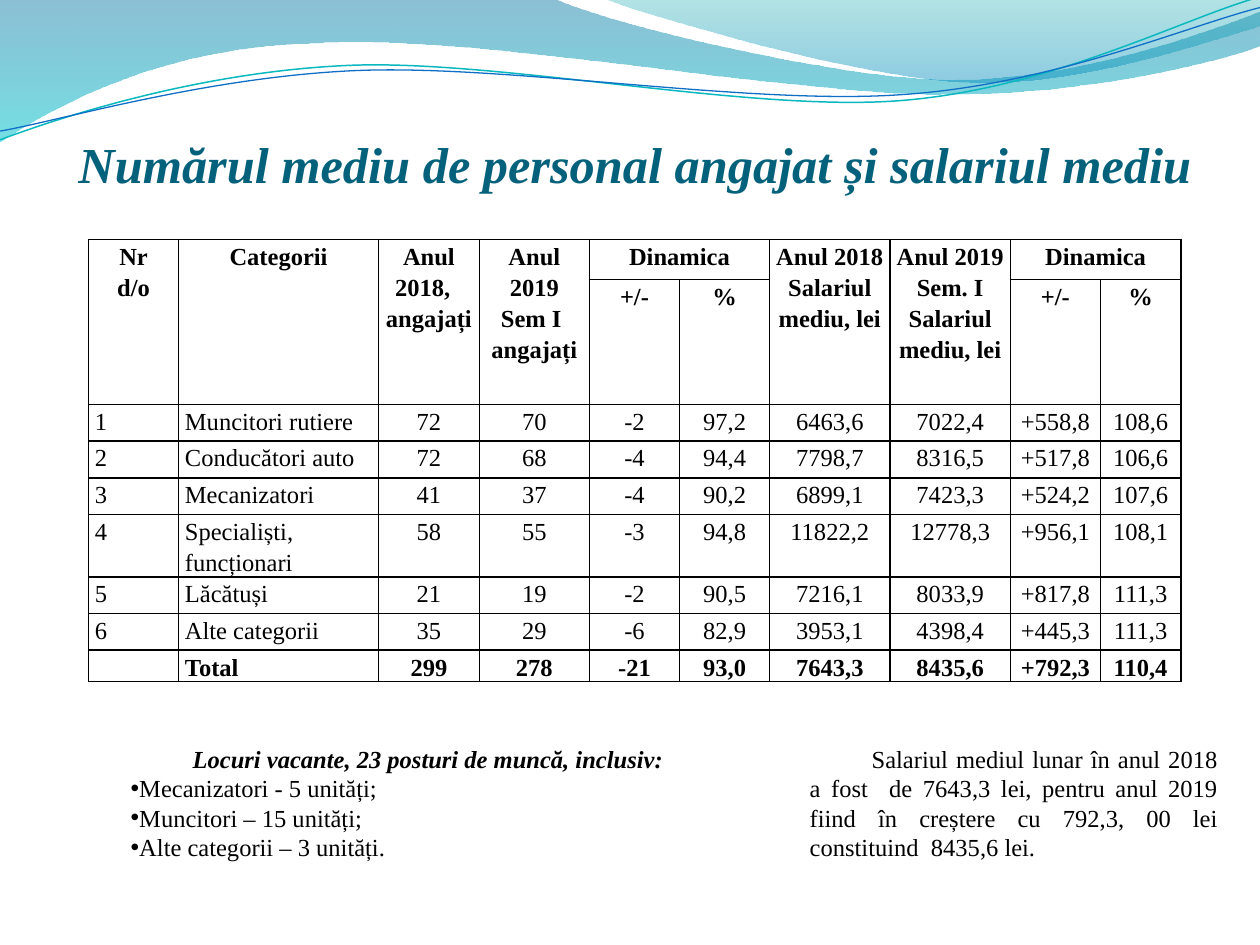
from lxml.etree import SubElement
from pptx import Presentation
from pptx.dml.color import RGBColor
from pptx.enum.shapes import MSO_SHAPE as Shape
from pptx.enum.text import MSO_ANCHOR as Anchor, MSO_AUTO_SIZE as AutoSize, PP_ALIGN as Align
from pptx.oxml.ns import qn
from pptx.util import Pt

TEXT = {"name": "Times New Roman", "size": Pt(14), "bold": False, "italic": False}
BOLD = {**TEXT, "bold": True}
BOLD_ITALIC = {**BOLD, "italic": True}
TITLE = {**BOLD_ITALIC, "size": Pt(28.8)}

# Outlines in points: a start, then lines (2 numbers) and Bézier curves (6 numbers).
LEFT_BAND = [(-0.7, -0.7), (316.8, -0.7), (342.7, 12.2, 478.1, 45.4, 545.8, 45.4),
             (614.2, 45.4, 689.8, 18.7, 720, 6.5), (720.7, 25.9),
             (707.8, 31.7, 626.4, 54.7, 537.1, 54), (447.8, 54, 275, 20.2, 185, 24.5),
             (92.9, 25.9, 33.1, 59.8, -0.7, 81.4)]
RIGHT_BAND = [(344.9, -0.7), (366.5, 7.9, 491, 44.6, 553.7, 46.8),
              (616.3, 49.7, 691.9, 23, 720, 15.1), (720, 0)]
TEAL_WAVE = [(0, 79.9), (34.6, 67, 113.8, 41, 199.4, 37.4),
             (284.4, 33.8, 427, 64.1, 513.4, 57.6), (599.8, 51.1, 675.4, 10.8, 718.6, -1.4)]
BLUE_WAVE = [(0, 74.9), (33.8, 69.1, 118.1, 43.9, 203.8, 40.3),
             (290.2, 36.7, 429.8, 60.5, 516.2, 54), (601.9, 48.2, 677.5, 15.1, 720, 4.3)]

COLUMNS = [51.5, 114.3, 57.5, 63, 51.5, 51.5, 68.8, 68.8, 51.5, 45.9]
ROWS = [23, 71.3, 21, 21, 21, 35.4, 21, 21, 17.7]
HEADERS = {  # (row, column): (text, rows spanned, columns spanned)
    (0, 0): ("Nr\nd/o", 2, 1),
    (0, 1): ("Categorii", 2, 1),
    (0, 2): ("Anul 2018,  \nangajați", 2, 1),
    (0, 3): ("Anul 2019\nSem I \nangajați", 2, 1),
    (0, 4): ("Dinamica", 1, 2),
    (0, 6): ("Anul 2018\nSalariul mediu, lei", 2, 1),
    (0, 7): ("Anul 2019 \nSem. I\nSalariul mediu, lei", 2, 1),
    (0, 8): ("Dinamica", 1, 2),
    (1, 4): ("+/-", 1, 1), (1, 5): ("%", 1, 1),
    (1, 8): ("+/-", 1, 1), (1, 9): ("%", 1, 1),
}
STAFF = [
    ["1", "Muncitori rutiere", "72", "70", "-2", "97,2", "6463,6", "7022,4", "+558,8", "108,6"],
    ["2", "Conducători auto", "72", "68", "-4", "94,4", "7798,7", "8316,5", "+517,8", "106,6"],
    ["3", "Mecanizatori", "41", "37", "-4", "90,2", "6899,1", "7423,3", "+524,2", "107,6"],
    ["4", "Specialiști, funcționari", "58", "55", "-3", "94,8", "11822,2", "12778,3", "+956,1", "108,1"],
    ["5", "Lăcătuși", "21", "19", "-2", "90,5", "7216,1", "8033,9", "+817,8", "111,3"],
    ["6", "Alte categorii", "35", "29", "-6", "82,9", "3953,1", "4398,4", "+445,3", "111,3"],
    ["", "Total", "299", "278", "-21", "93,0", "7643,3", "8435,6", "+792,3", "110,4"],
]
VACANCIES = ["Mecanizatori - 5 unități;", "Muncitori – 15 unități;", "Alte categorii – 3 unități."]
SALARY = ("Salariul mediul lunar în anul 2018 a fost  de 7643,3 lei, pentru anul 2019 "
          "fiind în creștere cu 792,3, 00 lei constituind  8435,6 lei.")


def rgb(hex_color):
    return RGBColor.from_string(hex_color)


def set_attrs(obj, values):
    for name, value in values.items():
        setattr(obj, name, value)


def place(sp, left, top, width, height):
    set_attrs(sp, {"left": Pt(left), "top": Pt(top), "width": Pt(width), "height": Pt(height)})


def add_text(p, text, font, align, spacing=1.0, color="000000"):
    set_attrs(p, {"alignment": align, "line_spacing": spacing, "space_before": Pt(0)})
    if not text:
        SubElement(p._p, qn("a:endParaRPr"), sz=str(int(font["size"].pt * 100)))
        return
    r = p.add_run()
    r.text = text
    set_attrs(r.font, font)
    r.font.color.rgb = rgb(color)


def set_indent(p, first_line=0, bullet=None):
    pPr = p._p.get_or_add_pPr()
    pPr.set("marL", "0")
    pPr.set("indent", str(Pt(first_line)))
    if bullet:
        SubElement(pPr, qn("a:buFont"), typeface="Arial")
        SubElement(pPr, qn("a:buChar"), char=bullet)
    else:
        SubElement(pPr, qn("a:buNone"))


def add_outline(slide, outline, close):
    """Draw straight segments through all points, then turn each curve's three into a Bézier."""
    (x, y), *segments = outline
    points = [(Pt(s[i]), Pt(s[i + 1])) for s in segments for i in range(0, len(s), 2)]
    builder = slide.shapes.build_freeform(Pt(x), Pt(y))
    builder.add_line_segments(points, close=close)
    sp = builder.convert_to_shape()
    sp.shadow.inherit = False
    lines = iter(list(sp._element.iter(qn("a:lnTo"))))
    for segment in segments:
        first = next(lines)
        if len(segment) == 6:
            first.tag = qn("a:cubicBezTo")
            for line in (next(lines), next(lines)):
                first.append(line[0])
                line.getparent().remove(line)
    return sp


def add_band(slide, outline, stops):
    """Add a closed shape with a downward gradient of (colour, opacity %) stops."""
    sp = add_outline(slide, outline, True)
    sp.line.fill.background()
    sp.fill.gradient()
    sp.fill.gradient_angle = 270
    for stop, position, (color, _) in zip(sp.fill.gradient_stops, (0, 1), stops):
        stop.position = position
        stop.color.rgb = rgb(color)
    for clr, (_, opacity) in zip(sp._element.spPr.iter(qn("a:srgbClr")), stops):
        SubElement(clr, qn("a:alpha"), val=str(opacity * 1000))


def add_wave(slide, outline, color, width):
    sp = add_outline(slide, outline, False)
    sp.fill.background()
    sp.line.color.rgb = rgb(color)
    sp.line.width = Pt(width)


def fill_title(sp, text):
    place(sp, 36, 55.4, 653.8, 90)
    tf = sp.text_frame
    set_attrs(tf, {"auto_size": AutoSize.NONE, "vertical_anchor": Anchor.BOTTOM, "word_wrap": True,
                   "margin_left": 0, "margin_right": 0, "margin_bottom": Pt(35)})
    add_text(tf.paragraphs[0], text, TITLE, Align.CENTER, color="04617B")


def format_cell(cell, text, font, align):
    set_attrs(cell, {"margin_left": Pt(3.6), "margin_right": Pt(3.6), "margin_top": 0,
                     "margin_bottom": 0, "vertical_anchor": Anchor.TOP})
    tcPr = cell._tc.get_or_add_tcPr()
    for side in ("lnL", "lnR", "lnT", "lnB"):
        ln = SubElement(tcPr, qn(f"a:{side}"), w=str(Pt(1)))
        SubElement(SubElement(ln, qn("a:solidFill")), qn("a:srgbClr"), val="000000")
    cell.fill.background()
    tf = cell.text_frame
    for i, line in enumerate(text.split("\n")):
        add_text(tf.add_paragraph() if i else tf.paragraphs[0], line, font, align, 1.15)


def add_staff_table(slide):
    table = slide.shapes.add_table(len(ROWS), len(COLUMNS), Pt(50.6), Pt(136.8),
                                   Pt(sum(COLUMNS)), Pt(sum(ROWS))).table
    set_attrs(table, {"first_row": False, "horz_banding": False})
    for column, width in zip(table.columns, COLUMNS):
        column.width = Pt(width)
    for row, height in zip(table.rows, ROWS):
        row.height = Pt(height)
    for i in range(2):
        for j in range(len(COLUMNS)):
            text, down, across = HEADERS.get((i, j), ("", 1, 1))
            format_cell(table.cell(i, j), text, BOLD, Align.CENTER)
            if down * across > 1:
                table.cell(i, j).merge(table.cell(i + down - 1, j + across - 1))
    for i, values in enumerate(STAFF, 2):
        font = BOLD if values is STAFF[-1] else TEXT
        for j, value in enumerate(values):
            format_cell(table.cell(i, j), value, font, Align.LEFT if j < 2 else Align.CENTER)


def format_note(sp):
    sp.fill.solid()
    sp.fill.fore_color.rgb = sp.line.color.rgb = rgb("FFFFFF")
    sp.line.width = Pt(2)
    tf = sp.text_frame
    set_attrs(tf, {"auto_size": AutoSize.NONE, "vertical_anchor": Anchor.MIDDLE, "word_wrap": True})
    return tf


def fill_vacancies(sp):
    place(sp, 67.5, 405.4, 337.5, 106.6)
    tf = format_note(sp)
    p = tf.paragraphs[0]
    add_text(p, "Locuri vacante, 23 posturi de muncă, inclusiv:", BOLD_ITALIC, Align.LEFT)
    set_indent(p, 35.4)
    for vacancy in VACANCIES:
        p = tf.add_paragraph()
        add_text(p, vacancy, TEXT, Align.JUSTIFY)
        set_indent(p, bullet="•")


def add_salary_note(slide):
    sp = slide.shapes.add_shape(Shape.RECTANGLE, Pt(455.6), Pt(405.4), Pt(247.5), Pt(106.6))
    sp.shadow.inherit = False
    p = format_note(sp).paragraphs[0]
    add_text(p, SALARY, TEXT, Align.JUSTIFY)
    set_indent(p, 35.4)


def main():
    prs = Presentation()
    set_attrs(prs, {"slide_width": Pt(720), "slide_height": Pt(540)})
    slide = prs.slides.add_slide(prs.slide_layouts[1])
    add_band(slide, LEFT_BAND, [("0074A1", 45), ("00C6CF", 55)])
    add_band(slide, RIGHT_BAND, [("00A1A9", 30), ("008BBF", 45)])
    add_wave(slide, TEAL_WAVE, "0AB8BF", 0.85)
    add_wave(slide, BLUE_WAVE, "0F6FC6", 0.75)
    fill_title(slide.shapes.title, "Numărul mediu de personal angajat și salariul mediu")
    add_staff_table(slide)
    fill_vacancies(slide.placeholders[1])
    add_salary_note(slide)
    prs.save("out.pptx")


if __name__ == "__main__":
    main()
